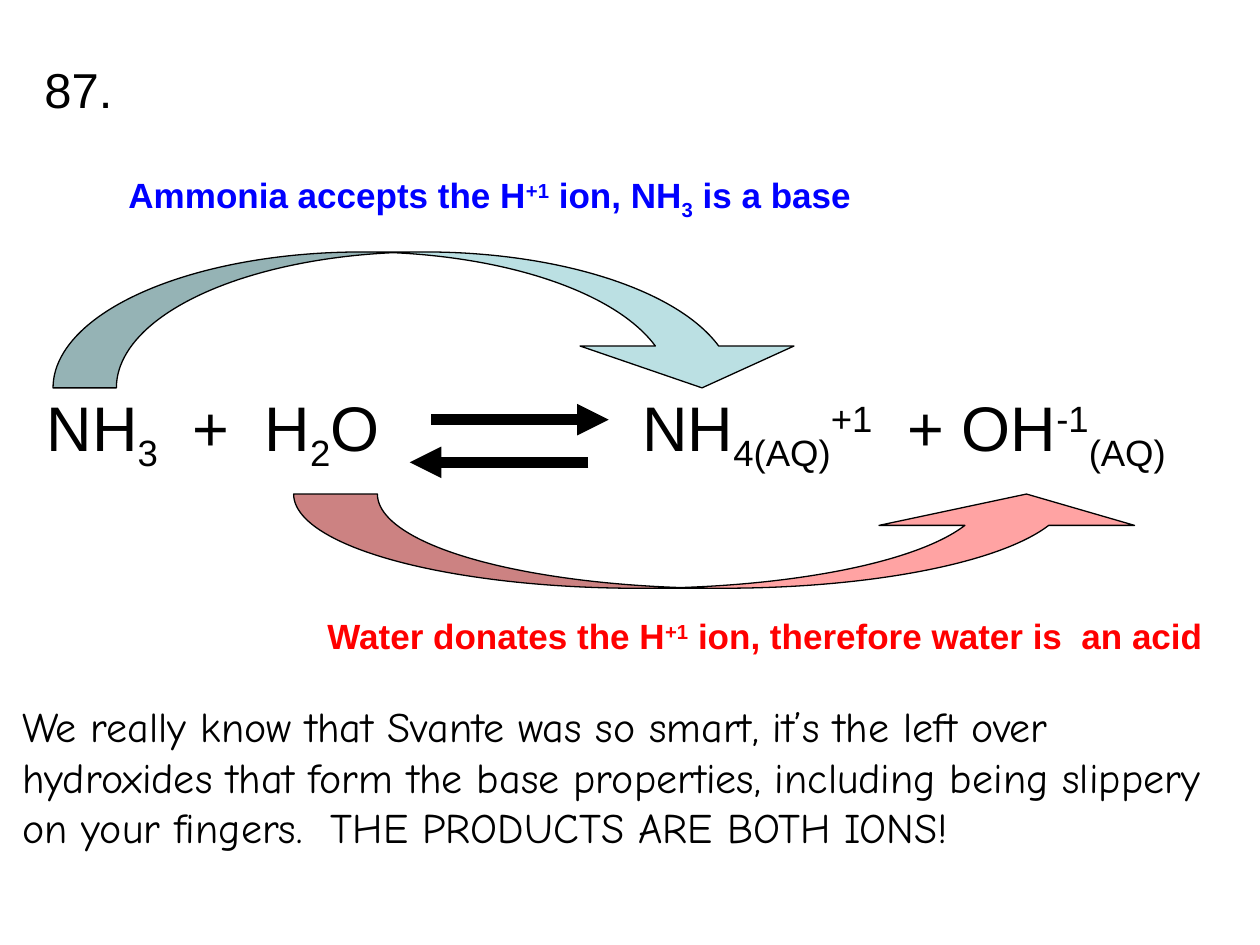
from pptx import Presentation
from pptx.dml.color import RGBColor
from pptx.enum.shapes import MSO_CONNECTOR, MSO_SHAPE
from pptx.enum.text import MSO_ANCHOR, MSO_AUTO_SIZE, PP_ALIGN
from pptx.oxml.ns import qn
from pptx.util import Cm, Pt
from lxml.etree import SubElement

BLACK, BLUE, RED = "000000", "0000FF", "FF0000"
SUB, SUPER = -25000, 30000

TITLE = ("87.", (0.64, 1.07, 5, 1.5))
TEXTS = [
    ([("NH", 0), ("3", SUB), ("  +  H", 0), ("2", SUB), ("O", 0)],
     (0.69, 7.7, 8, 1.78), "Arial", 36, BLACK, False),
    ([("NH", 0), ("4(AQ)", SUB), ("+1", SUPER), ("  + OH", 0), ("-1", SUPER), ("(AQ)", SUB)],
     (12.7, 7.7, 12.06, 1.78), "Arial", 36, BLACK, False),
    ([("Ammonia accepts the H", 0), ("+1", SUPER), (" ion, NH", 0), ("3", SUB), (" is a base", 0)],
     (2.34, 3.38, 15.44, 1.12), "Arial", 20, BLUE, True),
    ([("Water donates the H", 0), ("+1", SUPER), (" ion, therefore water is  an acid", 0)],
     (6.35, 12.27, 18.42, 1.12), "Arial", 20, RED, True),
    ([("We really know that Svante was so smart, it’s the left over hydroxides that form "
       "the base properties, including being slippery on your fingers.  "
       "THE PRODUCTS ARE BOTH IONS!", 0)],
     (0.2, 14, 24.97, 3.33), "Comic Neue", 24, BLACK, False),
]
CURVED_ARROWS = [
    (MSO_SHAPE.CURVED_DOWN_ARROW, (1.07, 5.08, 15.24, 2.74), (0.466, 1.574, 0.308), "BBE0E3"),
    (MSO_SHAPE.CURVED_UP_ARROW, (5.92, 9.96, 17.35, 1.9), (0.889, 2.711, 0.333), "FFA3A3"),
]
REACTION_ARROWS = [(8.69, 12.27, 8.46), (11.86, 8.26, 9.32)]


def color(value):
    return RGBColor.from_string(value)


def lengths(values):
    return [Cm(value) for value in values]


def style(span, font, size, tint, bold=False):
    span.font.name = font
    span.font.size = Pt(size)
    span.font.bold = bold
    span.font.color.rgb = color(tint)


def add_title(page, text, place):
    title = page.shapes.title
    title.left, title.top, title.width, title.height = lengths(place)
    frame = title.text_frame
    frame.text = text
    frame.auto_size = MSO_AUTO_SIZE.NONE
    frame.vertical_anchor = MSO_ANCHOR.TOP
    para = frame.paragraphs[0]
    para.alignment = PP_ALIGN.LEFT
    style(para.runs[0], "Arial", 28, BLACK)


def add_text(page, pieces, place, font, size, tint, bold):
    frame = page.shapes.add_textbox(*lengths(place)).text_frame
    frame.word_wrap = True
    para = frame.paragraphs[0]
    for text, baseline in pieces:
        span = para.add_run()
        span.text = text
        style(span, font, size, tint, bold)
        if baseline:
            span._r.get_or_add_rPr().set("baseline", str(baseline))


def add_curved_arrow(page, kind, place, adjustments, fill):
    arrow = page.shapes.add_shape(kind, *lengths(place))
    arrow.shadow.inherit = False
    for index, value in enumerate(adjustments):
        arrow.adjustments[index] = value
    arrow.fill.solid()
    arrow.fill.fore_color.rgb = color(fill)
    arrow.line.color.rgb = color(BLACK)
    arrow.line.width = Pt(0.75)


def add_reaction_arrow(page, start, end, height):
    arrow = page.shapes.add_connector(
        MSO_CONNECTOR.STRAIGHT, *lengths((start, height, end, height)))
    arrow.line.color.rgb = color(BLACK)
    arrow.line.width = Pt(6)
    SubElement(arrow.line._get_or_add_ln(), qn("a:tailEnd"), type="triangle")
    SubElement(arrow._element.spPr, qn("a:effectLst"))


def main():
    deck = Presentation()
    deck.slide_width, deck.slide_height = Cm(25.4), Cm(19.05)
    page = deck.slides.add_slide(deck.slide_layouts[5])
    add_title(page, *TITLE)
    for curved_arrow in CURVED_ARROWS:
        add_curved_arrow(page, *curved_arrow)
    for text in TEXTS:
        add_text(page, *text)
    for reaction_arrow in REACTION_ARROWS:
        add_reaction_arrow(page, *reaction_arrow)
    deck.save("out.pptx")


if __name__ == "__main__":
    main()
